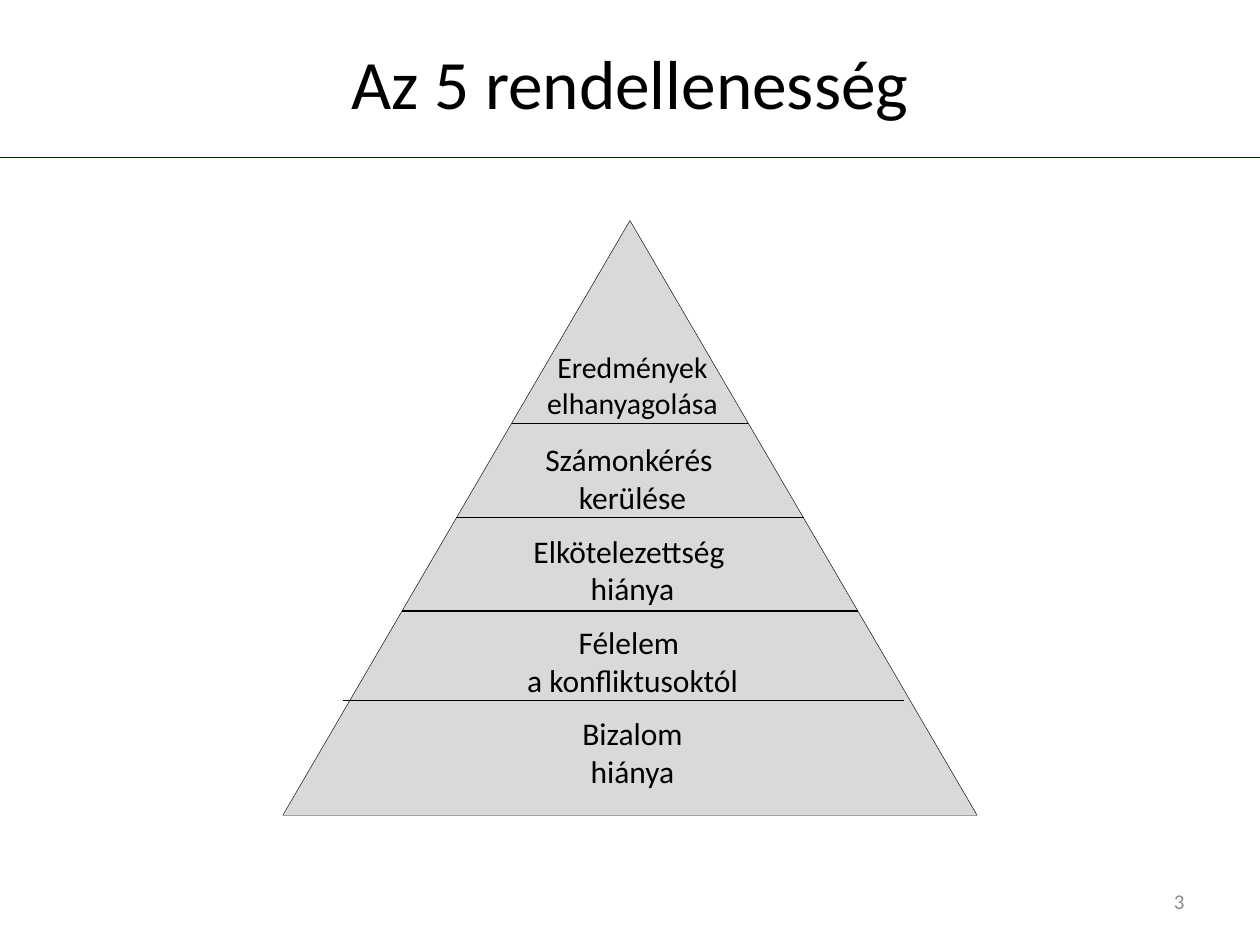
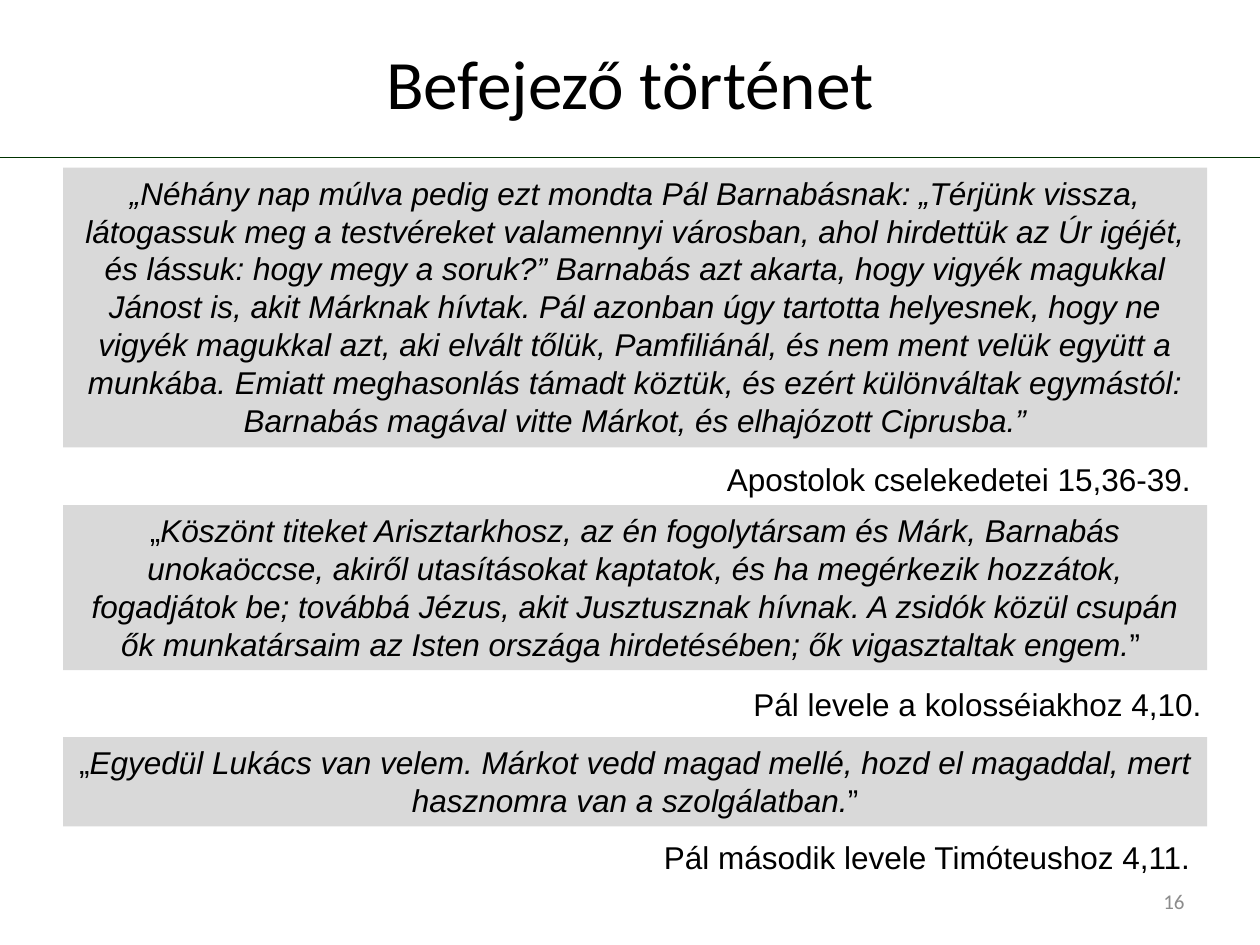
from lxml import etree
from pptx import Presentation
from pptx import util as u
from pptx.dml.color import RGBColor
from pptx.enum import shapes, text
from pptx.oxml.ns import qn

WIDTH, HEIGHT = 10, 7.5
BLACK, GREY, GREEN, NUMBER_GREY = "000000", "D9D9D9", "003300", "8C8C8C"
HEADING_FONT, QUOTE_FONT = "Calibri", "Arial"

PYRAMID = {
    "title": "Az 5 rendellenesség",
    "number": "3",
    "levels": [
        ["Eredmények elhanyagolása"],
        ["Számonkérés ", "kerülése"],
        ["Elkötelezettség ", "hiánya"],
        ["Félelem ", "a konfliktusoktól"],
        ["Bizalom", "hiánya"],
    ],
    "dividers": [(3.36, 0), (4.11, 0), (4.85, 0), (5.56, -0.05)],
}
STORY = {
    "title": "Befejező történet",
    "number": "16",
    "quotes": [
        {
            "top": 1.33, "height": 2.22,
            "runs": [("„Néhány nap múlva pedig ezt mondta Pál Barnabásnak: „Térjünk vissza, "
                      "látogassuk meg a testvéreket valamennyi városban, ahol hirdettük az Úr igéjét, "
                      "és lássuk: hogy megy a soruk?” Barnabás azt akarta, hogy vigyék magukkal "
                      "Jánost is, akit Márknak hívtak. Pál azonban úgy tartotta helyesnek, hogy ne "
                      "vigyék magukkal azt, aki elvált tőlük, Pamfiliánál, és nem ment velük együtt a "
                      "munkába. Emiatt meghasonlás támadt köztük, és ezért különváltak egymástól: "
                      "Barnabás magával vitte Márkot, és elhajózott Ciprusba.”", True)],
            "reference": "Apostolok cselekedetei 15,36-39.", "place": (5.67, 3.6, 3.92, 0.4),
        },
        {
            "top": 4.01, "height": 1.31,
            "runs": [("„", False),
                     ("Köszönt titeket Arisztarkhosz, az én fogolytársam és Márk, Barnabás "
                      "unokaöccse, akiről utasításokat kaptatok, és ha megérkezik hozzátok, "
                      "fogadjátok be; továbbá Jézus, akit Jusztusznak hívnak. A zsidók közül csupán "
                      "ők munkatársaim az Isten országa hirdetésében; ők vigasztaltak engem.", True),
                     ("” ", False)],
            "reference": "Pál levele a kolosséiakhoz 4,10.", "place": (5.88, 5.39, 3.79, 0.4),
        },
        {
            "top": 5.85, "height": 0.71,
            "runs": [("„", False),
                     ("Egyedül Lukács van velem. Márkot vedd magad mellé, hozd el magaddal, mert "
                      "hasznomra van a szolgálatban.", True),
                     ("”", False)],
            "reference": "Pál második levele Timóteushoz 4,11.", "place": (5.17, 6.6, 4.42, 0.4),
        },
    ],
}


def color(hex_value):
    return RGBColor.from_string(hex_value)


def inches(*lengths):
    return [u.Inches(length) for length in lengths]


def write(shape, paragraphs, size=18, font=HEADING_FONT, hex_value=BLACK,
          align="CENTER", anchor="TOP", wrap=True, grow=True):
    frame = shape.text_frame
    frame.word_wrap = wrap
    frame.vertical_anchor = text.MSO_ANCHOR[anchor]
    frame.auto_size = text.MSO_AUTO_SIZE.SHAPE_TO_FIT_TEXT if grow else text.MSO_AUTO_SIZE.NONE
    for index, runs in enumerate(paragraphs):
        paragraph = frame.add_paragraph() if index else frame.paragraphs[0]
        paragraph.alignment = text.PP_ALIGN[align]
        for words, italic in runs:
            run = paragraph.add_run()
            run.text = words
            run.font.size, run.font.name, run.font.italic = u.Pt(size), font, italic
            run.font.color.rgb = color(hex_value)


def add_text(slide, place, lines, **style):
    box = slide.shapes.add_textbox(*inches(*place))
    write(box, [[(line, False)] for line in lines], **style)


def add_panel(slide, kind, place, line_width=None):
    panel = slide.shapes.add_shape(kind, *inches(*place))
    panel.shadow.inherit = False
    panel.fill.solid()
    panel.fill.fore_color.rgb = color(GREY)
    if line_width:
        panel.line.color.rgb = color(BLACK)
        panel.line.width = u.Pt(line_width)
    else:
        panel.line.fill.background()
    return panel


def add_rule(slide, left, right, y, hex_value=BLACK, width=0.75):
    rule = slide.shapes.add_connector(shapes.MSO_CONNECTOR.STRAIGHT, *inches(left, y, right, y))
    rule.line.color.rgb = color(hex_value)
    rule.line.width = u.Pt(width)
    etree.SubElement(rule.element.spPr, qn("a:effectLst"))


def start_slide(presentation, content):
    slide = presentation.slides.add_slide(presentation.slide_layouts[6])
    add_rule(slide, 0, WIDTH, HEIGHT / 6, GREEN, 1)
    add_text(slide, (0.5, 0.3, WIDTH - 1, 0.7), [content["title"]],
             size=39.6, anchor="MIDDLE", grow=False)
    add_text(slide, (7.17, 6.95, 2.33, 0.4), [content["number"]], size=12,
             hex_value=NUMBER_GREY, align="RIGHT", anchor="MIDDLE", grow=False)
    return slide


def build_pyramid(presentation):
    slide = start_slide(presentation, PYRAMID)
    top, base, height = 1.75, 5.51, 4.72
    center = WIDTH / 2
    add_panel(slide, shapes.MSO_SHAPE.FLOWCHART_EXTRACT,
              (center - base / 2, top, base, height), 0.25)
    widths = [base * (y - top) / height for y, _ in PYRAMID["dividers"]]
    for (y, shift), width in zip(PYRAMID["dividers"], widths):
        add_rule(slide, center + shift - width / 2, center + shift + width / 2, y)
    first_top, step, text_center = 2.72, 0.725, center + 0.02
    for index, lines in enumerate(PYRAMID["levels"]):
        width = widths[max(index - 1, 0)] + 0.04
        add_text(slide, (text_center - width / 2, first_top + index * step, width, 0.71),
                 lines, size=18 if index else 17)


def build_story(presentation):
    slide = start_slide(presentation, STORY)
    for quote in STORY["quotes"]:
        panel = add_panel(slide, shapes.MSO_SHAPE.RECTANGLE,
                          (0.5, quote["top"], 9.08, quote["height"]))
        write(panel, [quote["runs"]], font=QUOTE_FONT)
        add_text(slide, quote["place"], [quote["reference"]],
                 font=QUOTE_FONT, align="LEFT", wrap=False)


def main():
    presentation = Presentation()
    presentation.slide_width, presentation.slide_height = inches(WIDTH, HEIGHT)
    build_pyramid(presentation)
    build_story(presentation)
    presentation.save("out.pptx")


if __name__ == "__main__":
    main()
